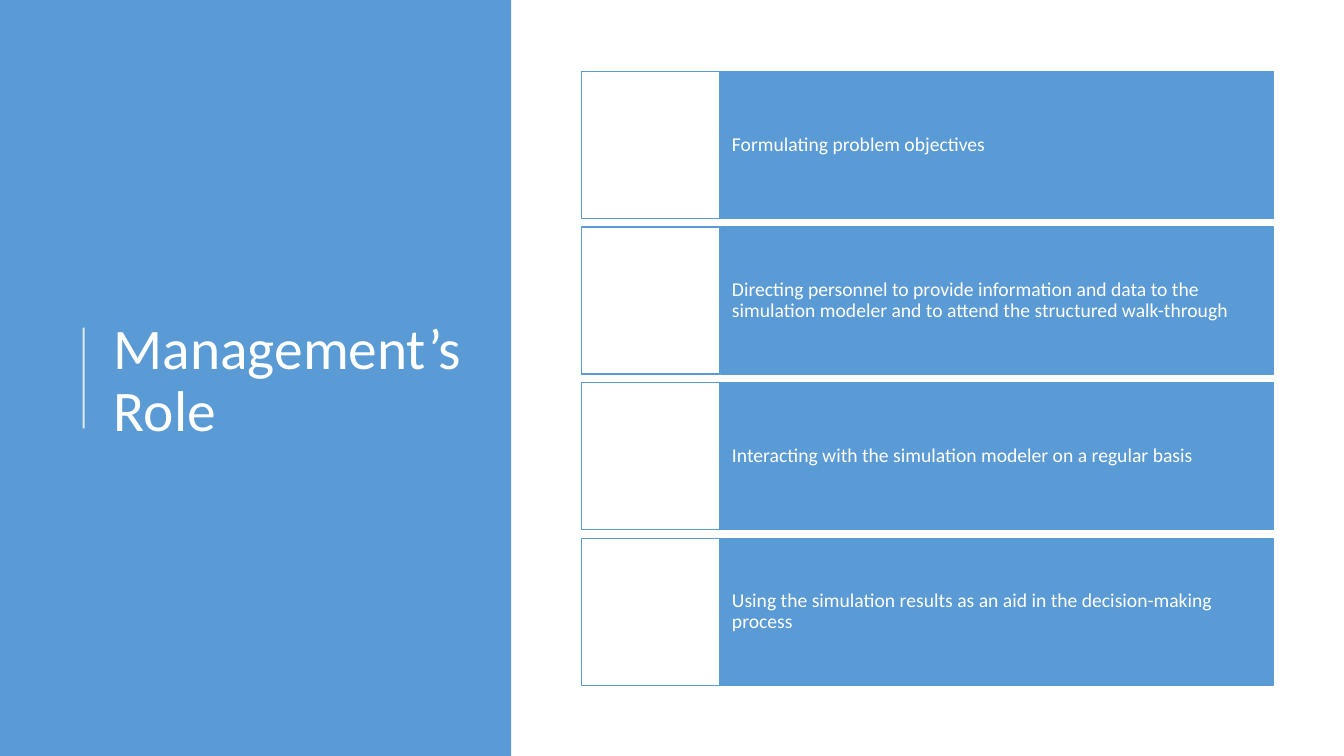
import pptx
import pptx.util
import pptx.dml.color
import pptx.enum.shapes
import pptx.enum.text
import pptx.oxml.ns
import pptx.oxml.xmlchemy
from pptx.util import Inches

BLUE = pptx.dml.color.RGBColor(0x5B, 0x9B, 0xD5)
WHITE = pptx.dml.color.RGBColor(0xFF, 0xFF, 0xFF)

ROLES = [
    "Formulating problem objectives",
    "Directing personnel to provide information and data to the simulation modeler "
    "and to attend the structured walk-through",
    "Interacting with the simulation modeler on a regular basis",
    "Using the simulation results as an aid in the decision-making process",
]
ROW_TOP, ROW_BOTTOM, ROW_HEIGHT = 0.71, 6.8, 1.46
ROW_PITCH = (ROW_BOTTOM - ROW_TOP - ROW_HEIGHT) / (len(ROLES) - 1)


class Deck:
    font = "Calibri"
    line_spacing = 0.9

    def __init__(self, prs):
        self.s = prs.slides.add_slide(prs.slide_layouts[6])

    def rect(self, x, y, w, h, fill, line=None):
        sp = self.s.shapes.add_shape(
            pptx.enum.shapes.MSO_SHAPE.RECTANGLE,
            Inches(x), Inches(y), Inches(w), Inches(h))
        sp.shadow.inherit = False
        sp.fill.solid()
        sp.fill.fore_color.rgb = fill
        if line is None:
            sp.line.fill.background()
        else:
            sp.line.color.rgb = line
            sp.line.width = pptx.util.Pt(1)
        return sp

    def text(self, sp, words, size, margin_x=0.1, margin_y=0.05):
        tf = sp.text_frame
        tf.word_wrap = True
        tf.vertical_anchor = pptx.enum.text.MSO_ANCHOR.MIDDLE
        tf.margin_left = tf.margin_right = Inches(margin_x)
        tf.margin_top = tf.margin_bottom = Inches(margin_y)
        p = tf.paragraphs[0]
        p.alignment = pptx.enum.text.PP_ALIGN.LEFT
        p.line_spacing = self.line_spacing
        r = p.add_run()
        r.text = words
        r.font.name = self.font
        r.font.size = pptx.util.Pt(size)
        r.font.color.rgb = WHITE

    def title(self, x, y, w, h, words):
        sp = self.s.shapes.add_textbox(Inches(x), Inches(y), Inches(w), Inches(h))
        self.text(sp, words, 41)

    def rule(self, x1, y1, x2, y2, opacity):
        c = self.s.shapes.add_connector(
            pptx.enum.shapes.MSO_CONNECTOR.STRAIGHT,
            Inches(x1), Inches(y1), Inches(x2), Inches(y2))
        c.line.color.rgb = WHITE
        c.line.width = pptx.util.Pt(1.5)
        properties = c._element.spPr
        color = properties.find(".//" + pptx.oxml.ns.qn("a:srgbClr"))
        alpha = pptx.oxml.xmlchemy.OxmlElement("a:alpha")
        alpha.set("val", str(opacity * 1000))
        color.append(alpha)
        properties.append(pptx.oxml.xmlchemy.OxmlElement("a:effectLst"))

    def role(self, y, words):
        bar = self.rect(7.15, y, 5.48, ROW_HEIGHT, BLUE, BLUE)
        self.text(bar, words, 14, 0.11, 0.37)
        self.rect(5.77, y, 1.37, ROW_HEIGHT, WHITE, BLUE)


def main():
    prs = pptx.Presentation()
    prs.slide_width = Inches(13.33)
    prs.slide_height = Inches(7.5)
    deck = Deck(prs)
    deck.rect(0, 0, 5.07, 7.5, BLUE)
    deck.rule(0.83, 4.25, 0.83, 3.25, 80)
    deck.title(1.03, 0.78, 3.69, 6.02, "Management’s Role")
    for i, words in enumerate(ROLES):
        deck.role(ROW_TOP + i * ROW_PITCH, words)
    prs.save("out.pptx")


if __name__ == "__main__":
    main()
